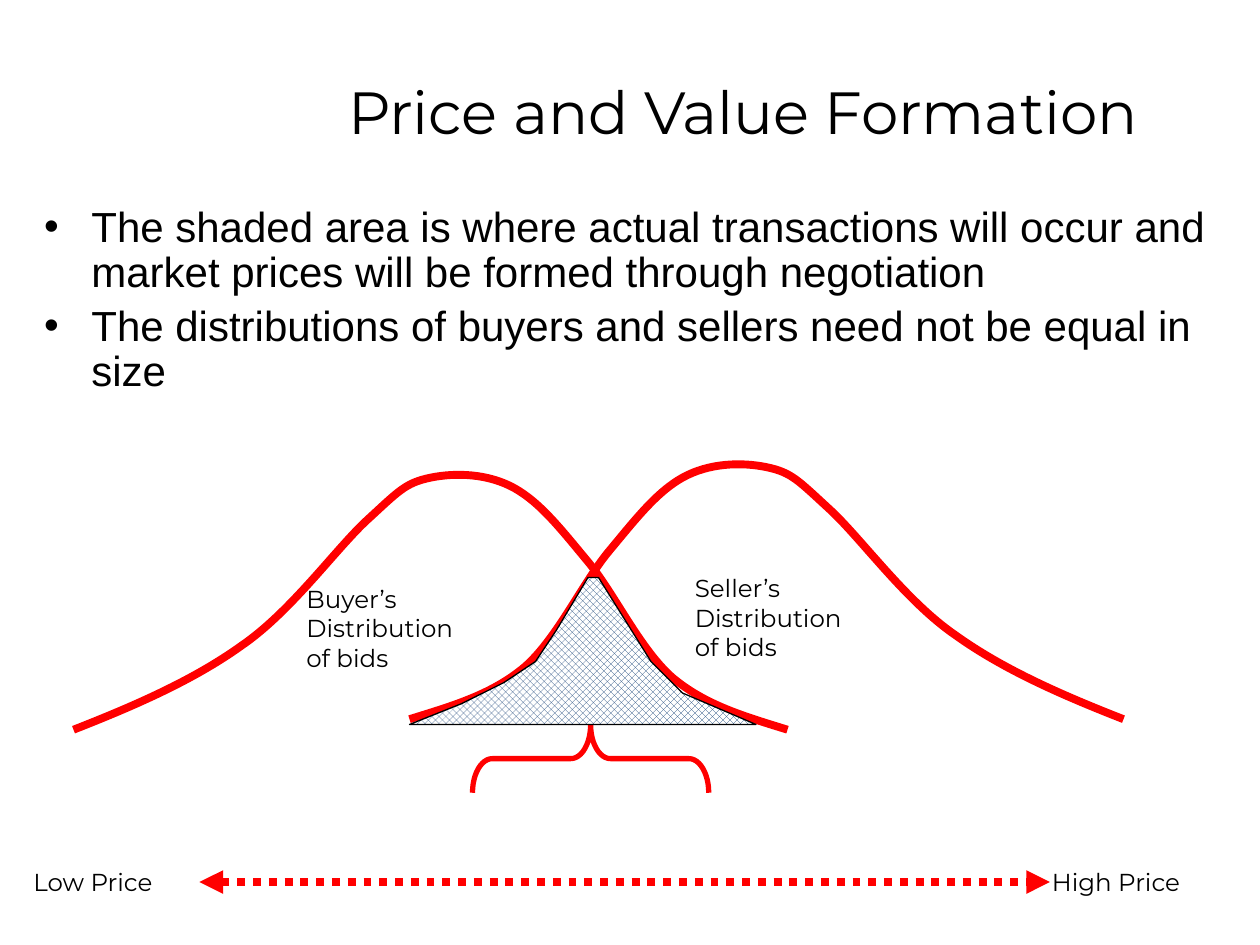
import lxml.etree
import pptx
import pptx.dml.color
import pptx.enum.dml
import pptx.enum.shapes
import pptx.enum.text
import pptx.oxml.ns
import pptx.util

BLACK = pptx.dml.color.RGBColor(0x00, 0x00, 0x00)
WHITE = pptx.dml.color.RGBColor(0xFF, 0xFF, 0xFF)
RED = pptx.dml.color.RGBColor(0xFF, 0x00, 0x00)
NAVY = pptx.dml.color.RGBColor(0x1F, 0x49, 0x7D)

CELLS_PER_INCH = 12
HEADING_FONT = "Montserrat"
BODY_FONT = "Arial"

# Grid points: a start, then three per Bezier segment.
BUYER_CURVE = [
    (7, 69.5),
    (12.75, 67.25), (18.4, 64.8), (23, 61.5),
    (27.75, 58.25), (32, 52.25), (35, 49.5),
    (38, 46.75), (38.6, 46), (41, 45.5),
    (43.4, 45), (46.5, 45.1), (49, 46.5),
    (51.5, 47.9), (53.5, 50.5), (56, 53.5),
    (58.5, 56.5), (60.9, 61.75), (64, 64.5),
    (67.2, 67.2), (71, 68.25), (75, 69.5),
]
# Sellers mirror the buyers about column 57, one row higher.
SELLER_CURVE = [(114 - column, row - 1) for column, row in BUYER_CURVE]
OVERLAP = [(39, 69), (72, 69), (65, 66), (62, 63), (57, 55), (56, 55),
           (53, 60), (51, 63), (48, 65), (44, 67)]


def cells(count):
    return pptx.util.Inches(count / CELLS_PER_INCH)


def qualified(tag):
    return pptx.oxml.ns.qn(tag)


def apply_format(target, values):
    for name, value in values.items():
        setattr(target, name, value)


class SlideBuilder:
    """Holds the slide and its style; lengths are cells of 1/12 inch."""

    def __init__(self, slide):
        self.slide = slide
        self.shapes = slide.shapes

    def fill_text(self, shape, texts, size, font, paragraph_format=None):
        frame = shape.text_frame
        frame.word_wrap = True
        frame.text = "\n".join(texts)
        for paragraph in frame.paragraphs:
            apply_format(paragraph, paragraph_format or {})
            for run in paragraph.runs:
                apply_format(run.font, {"name": font, "size": pptx.util.Pt(size)})
                run.font.color.rgb = BLACK

    def placeholder(self, index, box, texts, size, font, paragraph_format):
        shape = self.slide.placeholders[index]
        apply_format(shape, dict(zip(("left", "top", "width", "height"),
                                     map(cells, box))))
        shape.text_frame.auto_size = pptx.enum.text.MSO_AUTO_SIZE.NONE
        self.fill_text(shape, texts, size, font, paragraph_format)

    def label(self, box, text):
        shape = self.shapes.add_textbox(*map(cells, box))
        self.fill_text(shape, [text], 14, HEADING_FONT)

    def outline(self, shape, color, width):
        shape.line.color.rgb = color
        shape.line.width = pptx.util.Pt(width)

    def freeform(self, points, closed):
        start, *others = [(cells(column), cells(row)) for column, row in points]
        builder = self.shapes.build_freeform(*start)
        builder.add_line_segments(others, close=closed)
        shape = builder.convert_to_shape()
        shape.shadow.inherit = False
        return shape

    def curve(self, points):
        """Draw an open path, grouping each three points into a Bezier segment."""
        shape = self.freeform(points, closed=False)
        path = shape._element.find(".//" + qualified("a:path"))
        segments = path.findall(qualified("a:lnTo"))
        for first in range(0, len(segments), 3):
            bezier = lxml.etree.SubElement(path, qualified("a:cubicBezTo"))
            for segment in segments[first:first + 3]:
                bezier.append(segment[0])
                path.remove(segment)
        shape.fill.background()
        self.outline(shape, RED, 4.5)

    def hatched_area(self, points):
        shape = self.freeform(points, closed=True)
        shape.fill.patterned()
        shape.fill.pattern = pptx.enum.dml.MSO_PATTERN.SOLID_DIAMOND
        shape.fill.fore_color.rgb = NAVY
        shape.fill.back_color.rgb = WHITE
        self.outline(shape, BLACK, 0.75)

    def brace(self, box):
        shape = self.shapes.add_shape(
            pptx.enum.shapes.MSO_SHAPE.RIGHT_BRACE, *map(cells, box))
        shape.rotation = 270
        shape.adjustments[0] = 0.29
        shape.shadow.inherit = False
        shape.fill.background()
        self.outline(shape, RED, 3)

    def double_arrow(self, left, right, row):
        connector = self.shapes.add_connector(
            pptx.enum.shapes.MSO_CONNECTOR.STRAIGHT,
            cells(left), cells(row), cells(right), cells(row))
        self.outline(connector, RED, 4.5)
        connector.line.dash_style = pptx.enum.dml.MSO_LINE.ROUND_DOT
        properties = connector._element.spPr
        line = properties.find(qualified("a:ln"))
        for end in ("a:headEnd", "a:tailEnd"):
            lxml.etree.SubElement(line, qualified(end), type="triangle")
        lxml.etree.SubElement(properties, qualified("a:effectLst"))


def main():
    presentation = pptx.Presentation()
    presentation.slide_width = cells(120)
    presentation.slide_height = cells(90)
    slide = presentation.slides.add_slide(presentation.slide_layouts[1])
    builder = SlideBuilder(slide)

    builder.placeholder(0, (25, 0, 93, 21), ["Price and Value Formation "],
                        34, HEADING_FONT,
                        {"alignment": pptx.enum.text.PP_ALIGN.CENTER})
    builder.placeholder(1, (3, 19, 115, 20), [
        "The shaded area is where actual transactions will occur and "
        "market prices will be formed through negotiation",
        "The distributions of buyers and sellers need not be equal in size",
    ], 24, BODY_FONT, {"line_spacing": 0.9})

    for points in (BUYER_CURVE, SELLER_CURVE):
        builder.curve(points)
    builder.label((28, 55, 19, 9.6), "Buyer’s Distribution of bids")
    builder.label((65, 54, 19, 9.6), "Seller’s Distribution of bids")
    builder.brace((53, 61, 6.5, 22.5))
    builder.label((99, 82, 17, 4), "High Price")
    builder.double_arrow(19, 100, 84)
    builder.label((2, 82, 17, 4), "Low Price")
    builder.hatched_area(OVERLAP)

    presentation.save("out.pptx")


if __name__ == "__main__":
    main()
